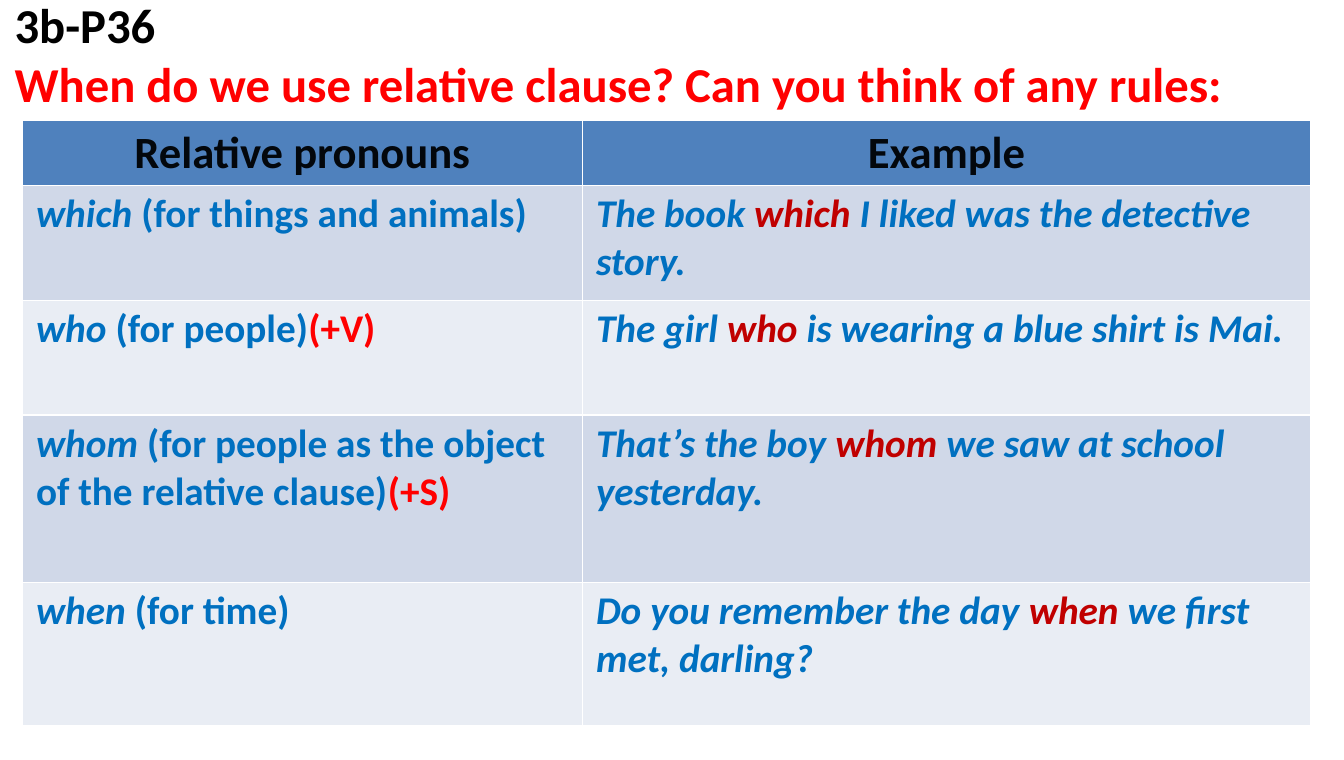
"""Build the slide on relative pronouns, with a table of uses and examples."""
import pptx
import pptx.dml.color
import pptx.enum.text
import pptx.util

Inches = pptx.util.Inches
COLORS = {
    "black": "000000",
    "red": "FF0000",
    "heading": "03070C",
    "blue": "0070C0",
    "crimson": "C00000",
    "header_fill": "4F81BD",
    "dark_band": "D0D8E8",
    "light_band": "E9EDF4",
}


def rgb(name):
    return pptx.dml.color.RGBColor.from_string(COLORS[name])


def write(paragraph, size, parts):
    paragraph.font.name = "Calibri"
    paragraph.font.size = pptx.util.Pt(size)
    paragraph.font.bold = True
    for text, color, italic in parts:
        run = paragraph.add_run()
        run.text = text
        run.font.color.rgb = rgb(color)
        run.font.italic = italic


presentation = pptx.Presentation()
presentation.slide_width = Inches(13.8)
presentation.slide_height = Inches(7.8)
slide = presentation.slides.add_slide(presentation.slide_layouts[6])

title = slide.shapes.add_textbox(Inches(0.03), Inches(-0.03), Inches(13.8), Inches(1.16))
title_frame = title.text_frame
title_frame.word_wrap = True
title_frame.vertical_anchor = pptx.enum.text.MSO_ANCHOR.MIDDLE
title_frame.margin_left = title_frame.margin_right = Inches(0.12)
title_frame.margin_top = title_frame.margin_bottom = Inches(0.06)
write(title_frame.paragraphs[0], 36, [("3b-P36", "black", False)])
question = "When do we use relative clause? Can you think of any rules:"
write(title_frame.add_paragraph(), 36, [(question, "red", False)])

pronouns = [
    ("which", " (for things and animals)", "",
     "The book ", " I liked was the detective story."),
    ("who", " (for people)", "(+V)",
     "The girl ", " is wearing a blue shirt is Mai."),
    ("whom", " (for people as the object of the relative clause)", "(+S)",
     "That’s the boy ", " we saw at school yesterday."),
    ("when", " (for time)", "",
     "Do you remember the day ", " we first met, darling?"),
]
rows = [[[("Relative pronouns", "heading", False)], [("Example", "heading", False)]]]
for pronoun, use, pattern, before, after in pronouns:
    rule = [(pronoun, "blue", True), (use, "blue", False)]
    if pattern:
        rule.append((pattern, "red", False))
    example = [(before, "blue", True), (pronoun, "crimson", True), (after, "blue", True)]
    rows.append([rule, example])

table = slide.shapes.add_table(
    len(rows), 2, Inches(0.23), Inches(1.24), Inches(13.23), Inches(6.21)
).table
for column, width in zip(table.columns, [5.75, 7.48]):
    column.width = Inches(width)
for row, height in zip(table.rows, [0.66, 1.18, 1.18, 1.72, 1.47]):
    row.height = Inches(height)

for row_index, row in enumerate(rows):
    is_header = row_index == 0
    band = "dark_band" if row_index % 2 else "light_band"
    for column_index, parts in enumerate(row):
        cell = table.cell(row_index, column_index)
        cell.margin_left = cell.margin_right = Inches(0.14)
        cell.margin_top = cell.margin_bottom = Inches(0.05)
        cell.fill.solid()
        cell.fill.fore_color.rgb = rgb("header_fill" if is_header else band)
        paragraph = cell.text_frame.paragraphs[0]
        if is_header:
            paragraph.alignment = pptx.enum.text.PP_ALIGN.CENTER
        write(paragraph, 33 if is_header else 29, parts)

presentation.save("out.pptx")
